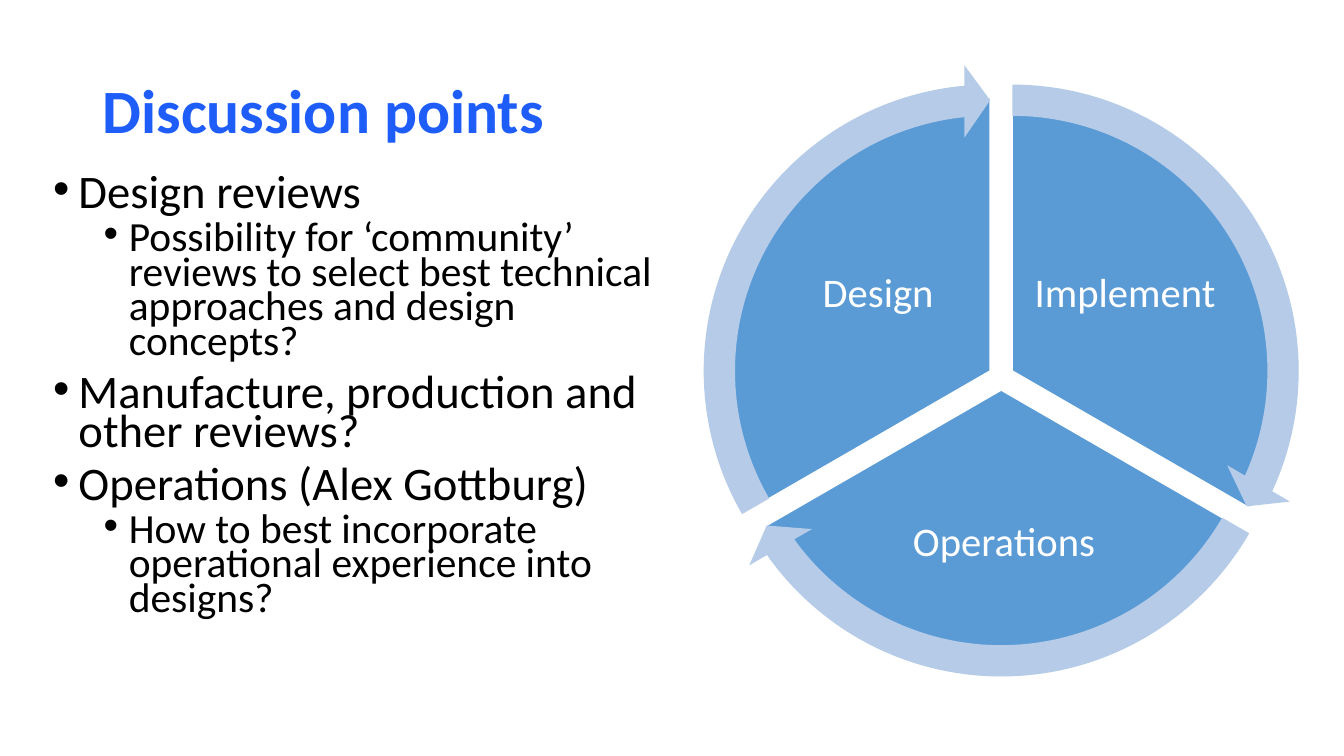
import dataclasses

import lxml.etree
import pptx
import pptx.dml.color
import pptx.enum.shapes
import pptx.enum.text
import pptx.oxml.ns
import pptx.util

Inches = pptx.util.Inches
Pt = pptx.util.Pt
SHAPES = pptx.enum.shapes.MSO_SHAPE
ALIGN = pptx.enum.text.PP_ALIGN
ANCHOR = pptx.enum.text.MSO_ANCHOR


@dataclasses.dataclass(frozen=True)
class Theme:
    font: str = "Calibri"
    title: str = "1E5DF8"
    body: str = "000000"
    light: str = "FFFFFF"
    sector: str = "5B9BD5"
    arrow: str = "B5CBE7"
    title_size: float = 44
    point_size: float = 33.3
    detail_size: float = 29.6
    label_size: float = 29


def rgb(color):
    return pptx.dml.color.RGBColor.from_string(color)


class SlideBuilder:
    def __init__(self, slide, theme):
        self.s = slide
        self.theme = theme

    def frame(self, left, top, width, height, anchor, inset=None):
        sp = self.s.shapes.add_textbox(
            Inches(left), Inches(top), Inches(width), Inches(height))
        tf = sp.text_frame
        tf.word_wrap = True
        tf.vertical_anchor = anchor
        if inset is not None:
            tf.margin_left = tf.margin_right = Inches(inset)
            tf.margin_top = tf.margin_bottom = Inches(inset)
        return tf

    def style(self, p, size, color, spacing, bold=False):
        p.line_spacing = spacing
        for r in p.runs:
            r.font.name = self.theme.font
            r.font.size = Pt(size)
            r.font.bold = bold
            r.font.color.rgb = rgb(color)

    def title(self, text, *box):
        tf = self.frame(*box, ANCHOR.MIDDLE)
        tf.text = text
        self.style(tf.paragraphs[0], self.theme.title_size, self.theme.title, 0.9, True)

    def label(self, text, *box):
        tf = self.frame(*box, ANCHOR.MIDDLE, 0.04)
        tf.text = text
        p = tf.paragraphs[0]
        p.alignment = ALIGN.CENTER
        self.style(p, self.theme.label_size, self.theme.light, 0.9)

    def bullets(self, points, *box):
        tf = self.frame(*box, ANCHOR.TOP)
        tf.text = "\n".join(text for level, text in points)
        sizes = (self.theme.point_size, self.theme.detail_size)
        for i, (p, (level, text)) in enumerate(zip(tf.paragraphs, points)):
            p.level = level
            pPr = p._p.get_or_add_pPr()
            pPr.set("marL", str(Inches(0.25 + 0.5 * level)))
            pPr.set("indent", str(Inches(-0.25)))
            for tag, key, value in (("a:buFont", "typeface", "Arial"),
                                    ("a:buChar", "char", "•")):
                lxml.etree.SubElement(pPr, pptx.oxml.ns.qn(tag)).set(key, value)
            p.space_before = Pt((10, 5)[level] if i else 0)
            self.style(p, sizes[level], self.theme.body, 0.7)

    def round_shape(self, kind, center_x, center_y, size, adjustments, fill, line=None):
        sp = self.s.shapes.add_shape(
            kind, Inches(center_x - size / 2), Inches(center_y - size / 2),
            Inches(size), Inches(size))
        sp.shadow.inherit = False
        for i, value in enumerate(adjustments):
            sp.adjustments[i] = value
        sp.fill.solid()
        sp.fill.fore_color.rgb = rgb(fill)
        if line:
            sp.line.color.rgb = rgb(line)
            sp.line.width = Pt(1)
        else:
            sp.line.fill.background()

    def sector(self, x, y, start, end):
        self.round_shape(SHAPES.PIE, x, y, 5.42, (start, end),
                         self.theme.sector, self.theme.light)

    def arrow(self, x, y, start, end):
        self.round_shape(SHAPES.CIRCULAR_ARROW, x, y, 6.09,
                         (0.051, 3.275, end, start, 0.059), self.theme.arrow)


POINTS = [
    (0, "Design reviews"),
    (1, "Possibility for ‘community’ reviews to select best technical "
        "approaches and design concepts?"),
    (0, "Manufacture, production and other reviews?"),
    (0, "Operations (Alex Gottburg)"),
    (1, "How to best incorporate operational experience into designs?"),
]

PHASES = [
    ("Implement", (10.04, 3.68), (162, 18), 14.73, (10.19, 2.12, 1.94, 1.61)),
    ("Operations", (9.93, 3.87), (18, 90), 86.72, (8.51, 4.68, 2.9, 1.42)),
    ("Design", (9.82, 3.68), (90, 162), 158.73, (7.74, 2.12, 1.94, 1.61)),
]


def main():
    prs = pptx.Presentation()
    prs.slide_width = Inches(13.33)
    prs.slide_height = Inches(7.5)
    builder = SlideBuilder(prs.slides.add_slide(prs.slide_layouts[6]), Theme())
    builder.title("Discussion points", 0.92, 0.4, 11.5, 1.45)
    builder.bullets(POINTS, 0.43, 1.71, 6.43, 4.95)
    for name, center, (start, end), tip, box in PHASES:
        builder.sector(*center, start, end)
        builder.label(name, *box)
    for name, center, (start, end), tip, box in PHASES:
        builder.arrow(*center, start, tip)
    prs.save("out.pptx")


if __name__ == "__main__":
    main()
